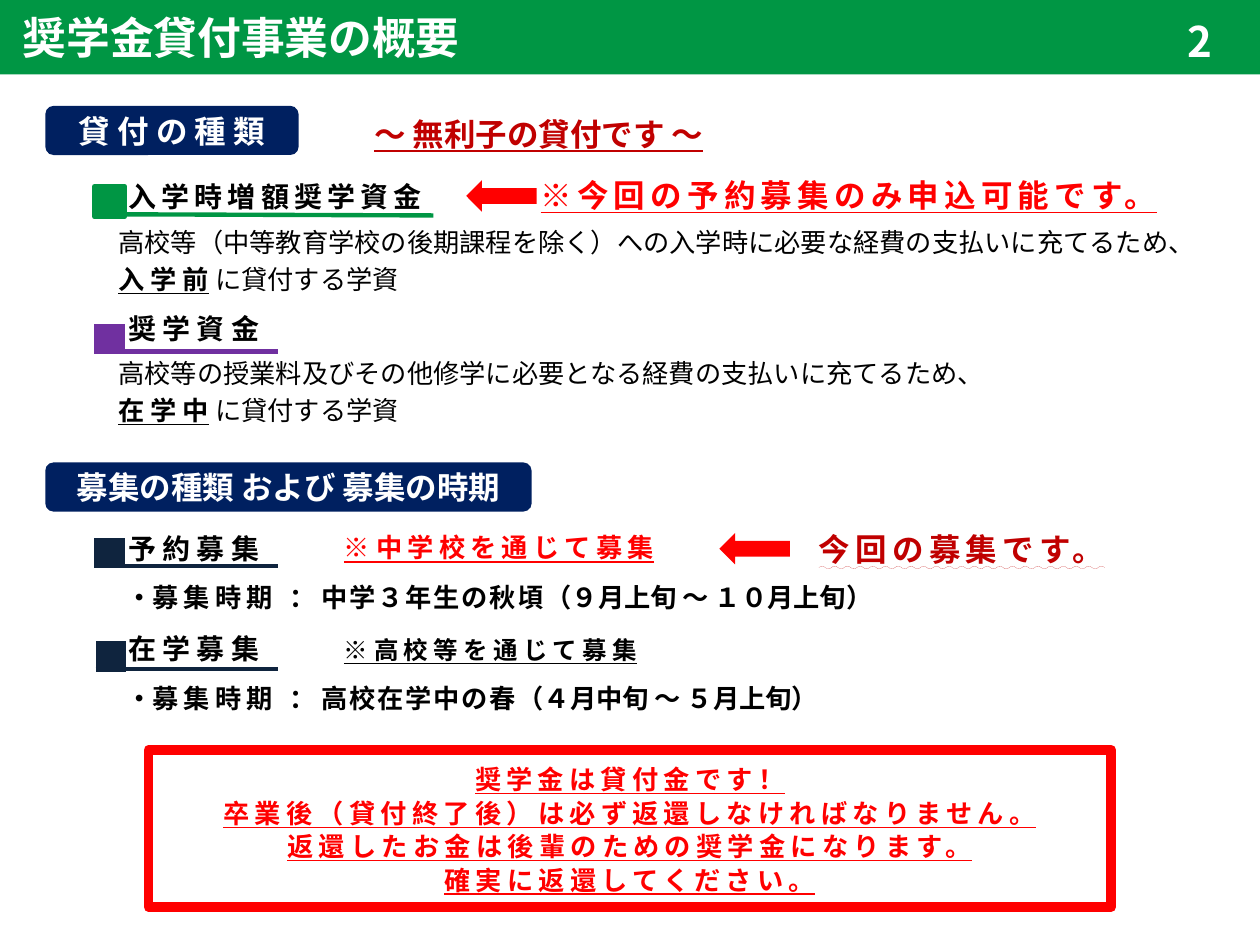
from lxml import etree
from pptx import Presentation
from pptx.dml.color import RGBColor
from pptx.enum.shapes import MSO_CONNECTOR as CONN, MSO_SHAPE as SHAPE
from pptx.enum.text import MSO_ANCHOR, MSO_AUTO_SIZE, MSO_UNDERLINE, PP_ALIGN
from pptx.oxml.ns import qn
from pptx.util import Inches, Pt

FONT = "Noto Sans CJK JP"
WHITE = RGBColor(0xFF, 0xFF, 0xFF)
BLACK = RGBColor(0, 0, 0)
GREEN = RGBColor(0x00, 0x96, 0x44)
NAVY = RGBColor(0x00, 0x20, 0x60)
DARK = RGBColor(0x0F, 0x24, 0x3E)
PURPLE = RGBColor(0x70, 0x30, 0xA0)
RED = RGBColor(0xFF, 0, 0)
CRIMSON = RGBColor(0xC0, 0, 0)


def write(p, text, size=15, color=BLACK, bold=True, underline=False, spc=0,
          align=PP_ALIGN.LEFT, line=None):
    """Add one formatted run to a paragraph with a fixed line height."""
    p.alignment = align
    p.line_spacing = Pt(line or 1.2 * size)
    r = p.add_run()
    r.text = text
    r.font.size, r.font.bold, r.font.underline = Pt(size), bold, underline
    r.font.name, r.font.color.rgb = FONT, color
    rPr = r.font._element
    rPr.set("spc", str(spc * 100))
    etree.SubElement(rPr, qn("a:ea")).set("typeface", FONT)


def setup(s, box=None, fill=None, anchor=MSO_ANCHOR.MIDDLE, left=0, top=0, wrap=True):
    """Place and fill a shape, and return its text frame."""
    if box:
        s.left, s.top, s.width, s.height = map(Inches, box)
    if fill is not None:
        s.fill.solid()
        s.fill.fore_color.rgb = fill
    if not s.is_placeholder and hasattr(s, "shadow"):
        s.shadow.inherit = False
        s.line.fill.background()
    tf = s.text_frame
    tf.auto_size = MSO_AUTO_SIZE.NONE
    tf.word_wrap, tf.vertical_anchor = wrap, anchor
    tf.margin_left, tf.margin_top = Inches(left), Inches(top)
    tf.margin_right = tf.margin_bottom = 0
    return tf


prs = Presentation()
prs.slide_width, prs.slide_height = Inches(10), Inches(7.5)
slide = prs.slides.add_slide(prs.slide_layouts[3])
shapes = slide.shapes
title, loans, periods = slide.placeholders

# Title band and page number
tf = setup(title, (0, 0, 10, 0.59), GREEN, left=0.18)
write(tf.paragraphs[0], "奨学金貸付事業の概要", size=25, color=WHITE)
s = shapes.add_shape(SHAPE.RECTANGLE, *map(Inches, (9.09, 0.04, 0.87, 0.5)))
tf = setup(s, fill=GREEN, top=0.06)
write(tf.paragraphs[0], "2", size=24, color=WHITE, align=PP_ALIGN.CENTER)

# Section labels
for top, width, text in [(0.84, 2.01, "貸 付 の 種 類"),
                         (3.67, 3.86, "募集の種類 および 募集の時期")]:
    s = shapes.add_shape(SHAPE.ROUNDED_RECTANGLE, *map(Inches, (0.36, top, width, 0.39)))
    tf = setup(s, fill=NAVY)
    write(tf.paragraphs[0], text, size=18, color=WHITE, align=PP_ALIGN.CENTER)

# Body text: (space before, indent, runs)
HEAD = {"size": 16}
PLAIN = {"bold": False}
UNDER = {"underline": True}
loan_lines = [
    (0, 0.08, [("入学時増額奨学資金", {"size": 16, "spc": 3})]),
    (4.5, 0, [("高校等（中等教育学校の後期課程を除く）への入学時に必要な経費の支払いに充てるため、", PLAIN)]),
    (0, 0, [("入 学 前", UNDER), (" ", {}), ("に貸付する学資", PLAIN)]),
    (8, 0.08, [("奨 学 資 金", HEAD)]),
    (4, 0, [("高校等の授業料及びその他修学に必要となる経費の支払いに充てるため、", PLAIN)]),
    (0, 0, [("在 学 中", UNDER), (" ", {}), ("に貸付する学資", PLAIN)]),
]
period_lines = []
for before, head, when, dates in [
        (0, "予 約 募 集", "中学３年生の秋頃", "（９月上旬 ～ １０月上旬）"),
        (9, "在 学 募 集", "高校在学中の春", "（４月中旬 ～ ５月上旬）")]:
    period_lines += [
        (before, 0.02, [(head, HEAD)]),
        (6.5, 0, [("・", {}), ("募集時期 ", {"spc": 3}), ("： ", {}),
                  (when, {"spc": 1}), (dates, {})]),
    ]
for body, box, lines in [(loans, (0.94, 1.4, 8.82, 2.1), loan_lines),
                         (periods, (1, 4.19, 8.6, 1.6), period_lines)]:
    tf = setup(body, box, anchor=MSO_ANCHOR.TOP)
    for i, (before, indent, runs) in enumerate(lines):
        p = tf.add_paragraph() if i else tf.paragraphs[0]
        p.space_before = Pt(before)
        for text, fmt in runs:
            write(p, text, line=21, **fmt)
        pPr = p._p.get_or_add_pPr()
        pPr.set("marL", str(Inches(indent)))
        pPr.set("indent", "0")
        etree.SubElement(pPr, qn("a:buNone"))

# Square markers and heading underlines
for left, top, right, drop, color in [(0.75, 1.48, 3.44, 0.01, GREEN),
                                      (0.75, 2.57, 2.21, 0, PURPLE),
                                      (0.75, 4.27, 2.21, 0, DARK),
                                      (0.76, 5.09, 2.21, 0, DARK)]:
    y = top + 0.22
    s = shapes.add_connector(CONN.STRAIGHT, *map(Inches, (left, y, right, y + drop)))
    s.line.color.rgb, s.line.width = color, Pt(2.5)
    etree.SubElement(s._element.spPr, qn("a:effectLst"))
    s = shapes.add_shape(SHAPE.FLOWCHART_PROCESS, *map(Inches, (left, top, 0.24, 0.24)))
    setup(s, fill=color)
    if color == GREEN:
        s.line.color.rgb, s.line.width = GREEN, Pt(2.75)

# Red arrows
for left, top in [(3.7, 1.43), (5.71, 4.23)]:
    s = shapes.add_shape(SHAPE.LEFT_ARROW, *map(Inches, (left, top, 0.56, 0.25)))
    setup(s, fill=RED)

# Underlined notes
for left, top, width, size, color, line, runs in [
        (2.97, 0.91, 2.7, 18, CRIMSON, True, [("～ 無利子の貸付です ～", 0)]),
        (4.29, 1.4, 5, 18, RED, True, [("※今回の予約募集のみ申込可能です。", 3)]),
        (2.73, 4.22, 2.6, 15, RED, True, [("※ ", 0), ("中学校を通じて募集", 3)]),
        (2.73, 5.04, 2.5, 14, BLACK, True, [("※ ", 0), ("高校等を通じて募集", 3)]),
        (6.5, 4.21, 2.4, 18, CRIMSON, MSO_UNDERLINE.WAVY_LINE, [("今回の募集です。", 3)])]:
    s = shapes.add_textbox(*map(Inches, (left, top, width, 0.3)))
    tf = setup(s, anchor=MSO_ANCHOR.TOP, wrap=False)
    for text, spc in runs:
        write(tf.paragraphs[0], text, size=size, color=color, underline=line, spc=spc)

# Repayment notice
s = shapes.add_shape(SHAPE.RECTANGLE, *map(Inches, (1.18, 5.95, 7.64, 1.25)))
tf = setup(s)
s.fill.background()
s.line.color.rgb, s.line.width = RED, Pt(5.5)
for i, text in enumerate(["奨学金は貸付金です！",
                          "卒業後（貸付終了後）は必ず返還しなければなりません。",
                          "返還したお金は後輩のための奨学金になります。",
                          "確実に返還してください。"]):
    p = tf.add_paragraph() if i else tf.paragraphs[0]
    write(p, text, color=RED, underline=True, spc=3, align=PP_ALIGN.CENTER, line=19.1)

prs.save("out.pptx")
